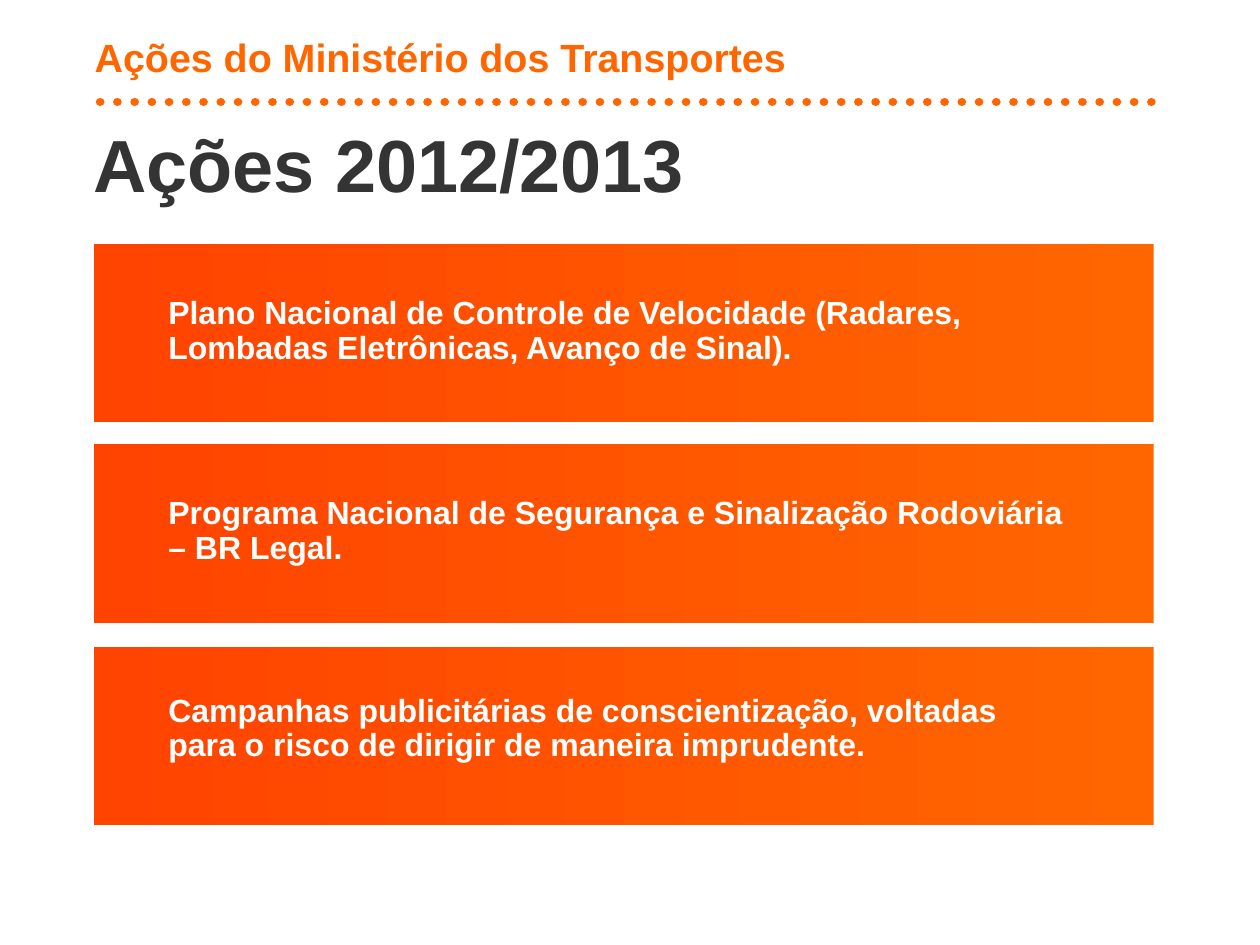
from dataclasses import dataclass

from lxml.etree import SubElement
from pptx import Presentation
from pptx.dml.color import RGBColor
from pptx.enum.dml import MSO_LINE
from pptx.enum.shapes import MSO_CONNECTOR, MSO_SHAPE
from pptx.enum.text import MSO_ANCHOR, PP_ALIGN
from pptx.oxml.ns import qn
from pptx.util import Inches, Pt


@dataclass(frozen=True)
class Theme:
    font: str = "Arial"
    orange: RGBColor = RGBColor.from_string("FF6600")
    red: RGBColor = RGBColor.from_string("FF4300")
    dark: RGBColor = RGBColor.from_string("343434")
    white: RGBColor = RGBColor.from_string("FFFFFF")
    header_size: int = 32
    title_size: int = 60
    action_size: int = 26
    rule_width: int = 7


theme = Theme()


def add_text(page, place, text, size, color, anchor, insets):
    box = page.shapes.add_textbox(*[Inches(value) for value in place])
    frame = box.text_frame
    frame.word_wrap = True
    frame.vertical_anchor = anchor
    frame.margin_left = frame.margin_right = Inches(insets[0])
    frame.margin_top = frame.margin_bottom = Inches(insets[1])
    para = frame.paragraphs[0]
    span = para.add_run()
    span.text = text
    span.font.name = theme.font
    span.font.size = Pt(size)
    span.font.bold = True
    span.font.color.rgb = color
    return para


deck = Presentation()
deck.slide_width = Inches(14.22)
deck.slide_height = Inches(10.67)
page = deck.slides.add_slide(deck.slide_layouts[6])

actions = [
    (2.75, 3.01, "Plano Nacional de Controle de Velocidade (Radares, Lombadas Eletrônicas, Avanço de Sinal)."),
    (5.01, 5.27, "Programa Nacional de Segurança e Sinalização Rodoviária – BR Legal."),
    (7.3, 7.5, "Campanhas publicitárias de conscientização, voltadas para o risco de dirigir de maneira imprudente."),
]

for band_top, text_top, action in actions:
    band = page.shapes.add_shape(
        MSO_SHAPE.RECTANGLE, Inches(1.06), Inches(band_top), Inches(11.96), Inches(2.02)
    )
    band.shadow.inherit = False
    band.line.fill.background()
    band.fill.gradient()
    band.fill.gradient_angle = 180
    for stop, color in zip(band.fill.gradient_stops, (theme.orange, theme.red)):
        stop.color.rgb = color

    para = add_text(
        page, (1.64, text_top, 10.67, 1.47), action,
        theme.action_size, theme.white, MSO_ANCHOR.MIDDLE, (0.26, 0.05),
    )
    para.line_spacing = 0.9
    para.space_after = Pt(11.4)

header = add_text(
    page, (0.24, 0.18, 9.47, 0.92), "Ações do Ministério dos Transportes",
    theme.header_size, theme.orange, MSO_ANCHOR.MIDDLE, (0.1, 0.05),
)
header.alignment = PP_ALIGN.CENTER

rule = page.shapes.add_connector(
    MSO_CONNECTOR.STRAIGHT, Inches(1.13), Inches(1.15), Inches(13.1), Inches(1.15)
)
rule.line.color.rgb = theme.orange
rule.line.width = Pt(theme.rule_width)
rule.line.dash_style = MSO_LINE.ROUND_DOT
rule.line._ln.set("cap", "rnd")
SubElement(rule._element.spPr, qn("a:effectLst"))

title = add_text(
    page, (1.05, 1.45, 12.19, 1.07), "Ações 2012/2013",
    theme.title_size, theme.dark, MSO_ANCHOR.TOP, (0, 0),
)
title.line_spacing = 0.9

deck.save("out.pptx")
